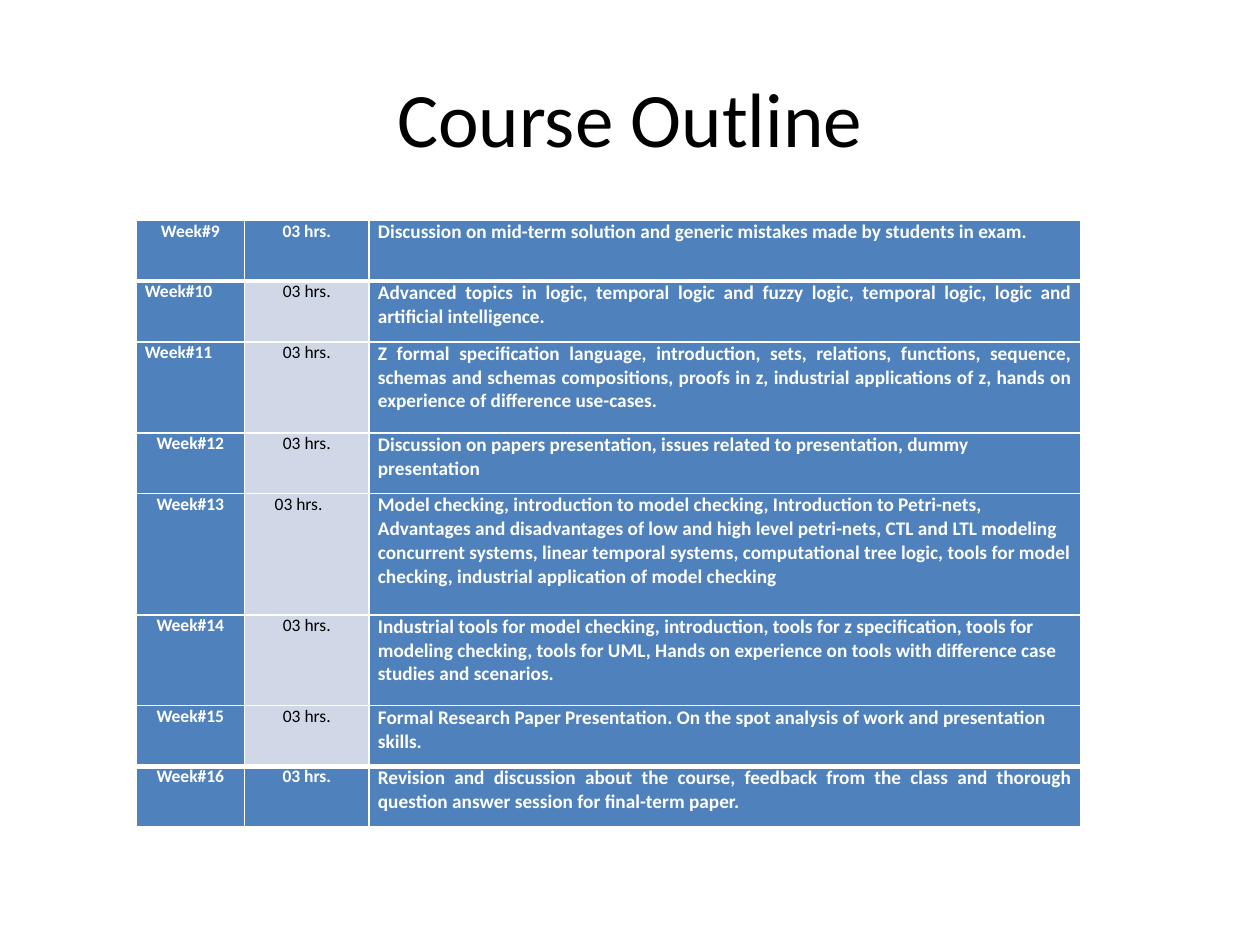
from dataclasses import dataclass

from lxml import etree
from pptx import Presentation
from pptx import util as u
from pptx.dml.color import RGBColor
from pptx.enum import text
from pptx.oxml import ns

COLORS = {"blue": "4F81BD", "pale": "D0D8E8", "white": "FFFFFF", "black": "000000"}
FONT = "Calibri"
SLIDE_W, SLIDE_H = u.Inches(10), u.Inches(7.5)

# Grid, in percent of the slide's width or height
COLUMNS = (8.6, 9.9, 56.5)
TABLE_LEFT, TABLE_TOP = 10.8, 23.33
LINE_HEIGHT = 3.21

LEFT, CENTER, JUSTIFY = text.PP_ALIGN.LEFT, text.PP_ALIGN.CENTER, text.PP_ALIGN.JUSTIFY


@dataclass
class Week:
    number: int
    lines: int
    topic: str
    topic_align: text.PP_ALIGN = LEFT
    label_align: text.PP_ALIGN = CENTER
    accent: bool = False
    tabbed: bool = False


WEEKS = [
    Week(9, 2, "Discussion on mid-term solution and generic mistakes made by students in exam. ",
         JUSTIFY, accent=True),
    Week(10, 2, "Advanced topics in logic, temporal logic and fuzzy logic, temporal logic, "
         "logic and artificial intelligence.", JUSTIFY, LEFT),
    Week(11, 3, "Z formal specification language, introduction, sets, relations, functions, "
         "sequence, schemas and schemas compositions, proofs in z, industrial applications of z, "
         "hands on experience of difference use-cases.", JUSTIFY, LEFT),
    Week(12, 2, "Discussion on papers presentation, issues related to presentation, "
         "dummy presentation"),
    Week(13, 4, "Model checking, introduction to model checking, Introduction to Petri-nets, "
         "Advantages and disadvantages of low and high level petri-nets, CTL and LTL modeling "
         "concurrent systems, linear temporal systems, computational tree logic, tools for "
         "model checking, industrial application of model checking", tabbed=True),
    Week(14, 3, "Industrial tools for model checking, introduction, tools for z specification, "
         "tools for modeling checking, tools for UML, Hands on experience on tools with "
         "difference case studies and scenarios."),
    Week(15, 2, "Formal Research Paper Presentation. On the spot analysis of work and "
         "presentation skills."),
    Week(16, 2, "Revision and discussion about the course, feedback from the class and thorough "
         "question answer session for final-term paper.", JUSTIFY, accent=True),
]


def across(percent: float) -> int:
    return round(SLIDE_W * percent / 100)


def down(percent: float) -> int:
    return round(SLIDE_H * percent / 100)


def add_span(para, words: str, size: float, color: str, bold: bool = False) -> None:
    span = para.add_run()
    span.text = words
    span.font.name, span.font.size, span.font.bold = FONT, u.Pt(size), bold
    span.font.color.rgb = RGBColor.from_string(COLORS[color])


def set_borders(cell, top: float, bottom: float) -> None:
    props = cell._tc.get_or_add_tcPr()
    for side, width in (("L", 1), ("R", 1), ("T", top), ("B", bottom)):
        line = etree.SubElement(props, ns.qn(f"a:ln{side}"), w=str(u.Pt(width)))
        fill = etree.SubElement(line, ns.qn("a:solidFill"))
        etree.SubElement(fill, ns.qn("a:srgbClr"), val=COLORS["white"])


def add_tabs(para, stops: tuple) -> None:
    tabs = etree.SubElement(para._p.get_or_add_pPr(), ns.qn("a:tabLst"))
    for inches, align in stops:
        etree.SubElement(tabs, ns.qn("a:tab"), pos=str(u.Inches(inches)), algn=align)


def format_cell(cell, fill: str, align: text.PP_ALIGN):
    cell.margin_left = cell.margin_right = u.Inches(0.07)
    cell.margin_top = cell.margin_bottom = 0
    cell.fill.solid()
    cell.fill.fore_color.rgb = RGBColor.from_string(COLORS[fill])
    para = cell.text_frame.paragraphs[0]
    para.alignment = align
    return para


def fill_week(table, row: int, week: Week) -> None:
    table.rows[row].height = down(LINE_HEIGHT * week.lines)
    label, hours, topic = (table.cell(row, column) for column in range(len(COLUMNS)))

    # Thick rules set off the first and last weeks
    top = 3 if row in (1, len(WEEKS) - 1) else 1
    bottom = 3 if row in (0, len(WEEKS) - 2) else 1
    for cell in (label, hours, topic):
        set_borders(cell, top, bottom)

    para = format_cell(label, "blue", week.label_align)
    add_span(para, f"Week#{week.number}", 10, "white", True)

    para = format_cell(hours, "blue" if week.accent else "pale",
                       LEFT if week.tabbed else CENTER)
    if week.tabbed:
        add_tabs(para, ((0.13, "l"), (0.36, "ctr")))
    add_span(para, "\t\t03 hrs." if week.tabbed else "03 hrs.", 10,
             "white" if week.accent else "black", week.accent)

    para = format_cell(topic, "blue", week.topic_align)
    add_span(para, week.topic, 11, "white", True)


def main() -> None:
    deck = Presentation()
    deck.slide_width, deck.slide_height = SLIDE_W, SLIDE_H
    page = deck.slides.add_slide(deck.slide_layouts[5])

    # Title
    title = page.shapes.title
    title.left, title.top, title.width, title.height = across(5), down(4), across(90), down(16.67)
    title.text_frame.vertical_anchor = text.MSO_ANCHOR.MIDDLE
    para = title.text_frame.paragraphs[0]
    para.alignment = CENTER
    add_span(para, "Course Outline", 44, "black")

    # Weekly schedule
    height = LINE_HEIGHT * sum(week.lines for week in WEEKS)
    table = page.shapes.add_table(len(WEEKS), len(COLUMNS), across(TABLE_LEFT), down(TABLE_TOP),
                                  across(sum(COLUMNS)), down(height)).table
    for column, width in zip(table.columns, COLUMNS):
        column.width = across(width)
    for row, week in enumerate(WEEKS):
        fill_week(table, row, week)

    deck.save("out.pptx")


if __name__ == "__main__":
    main()
